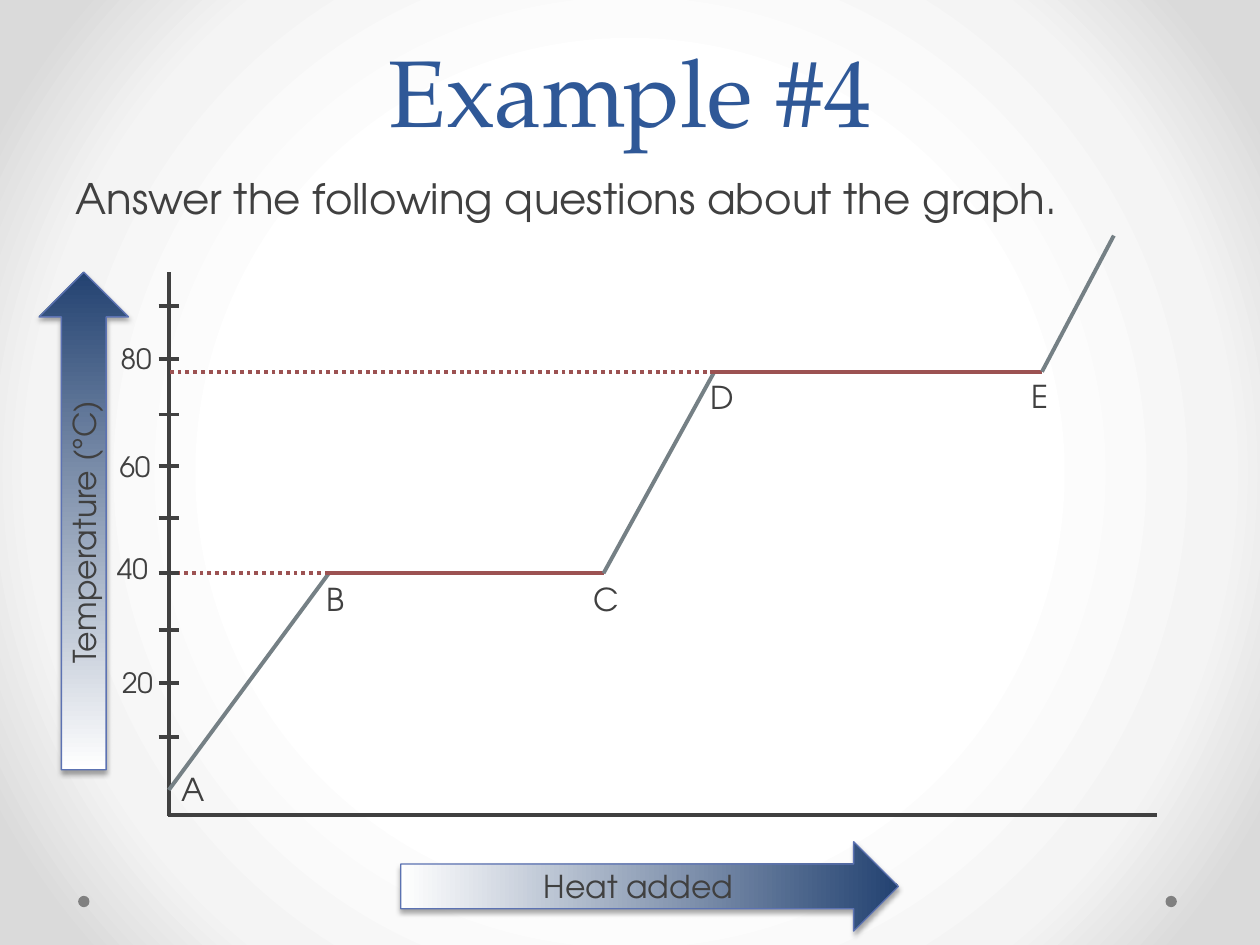
from lxml import etree
from pptx import Presentation
from pptx import util as u
from pptx.dml.color import RGBColor
from pptx.enum import dml, shapes, text
from pptx.oxml import parse_xml
from pptx.oxml.ns import nsdecls, qn

SANS, SERIF = "TeX Gyre Adventor", "TeX Gyre Pagella"
INK, HEATING, PLATEAU = "404040", "758085", "9C5252"

deck = Presentation()
deck.slide_width, deck.slide_height = u.Inches(10), u.Inches(7.5)
column, row = deck.slide_width / 100, deck.slide_height / 75
slide = deck.slides.add_slide(deck.slide_layouts[6])
hue = RGBColor.from_string


def write(words, box=None, host=None, size=18, font=SANS, color=INK,
          align=text.PP_ALIGN.LEFT, anchor=text.MSO_ANCHOR.TOP, leading=None, before=0):
    if host is None:
        left, top, wide, high = box
        host = slide.shapes.add_textbox(int(left * column), int(top * row),
                                        int(wide * column), int(high * row))
    frame = host.text_frame
    frame.word_wrap = True
    frame.vertical_anchor = anchor
    line = frame.paragraphs[0]
    line.alignment = align
    line.space_before = u.Pt(before)
    if leading:
        line.line_spacing = u.Pt(leading)
    run = line.add_run()
    run.text = words
    run.font.size, run.font.name = u.Pt(size), font
    run.font.color.rgb = hue(color)


def stroke(start, end, color=INK, dotted=False):
    segment = slide.shapes.add_connector(
        shapes.MSO_CONNECTOR.STRAIGHT, int(start[0] * column), int(start[1] * row),
        int(end[0] * column), int(end[1] * row))
    segment.line.width = u.Pt(2.25)
    segment.line.color.rgb = hue(color)
    if dotted:
        segment.line.dash_style = dml.MSO_LINE.ROUND_DOT
    etree.SubElement(segment._element.spPr, qn("a:effectLst"))


slide.background.fill.gradient()
backdrop = slide._element.cSld.find(qn("p:bg")).find(qn("p:bgPr"))
stops = "".join(f'<a:gs pos="{share}000"><a:srgbClr val="{shade}"/></a:gs>'
                for share, shade in ((50, "FFFFFF"), (76, "F4F4F4"), (92, "DADADA")))
backdrop.replace(backdrop[0], parse_xml(
    f'<a:gradFill {nsdecls("a")} rotWithShape="1"><a:gsLst>{stops}</a:gsLst><a:path path="circle">'
    '<a:fillToRect l="50000" t="50000" r="50000" b="50000"/></a:path></a:gradFill>'))

for left in (92.5, 6.2):
    corner_dot = slide.shapes.add_shape(shapes.MSO_SHAPE.OVAL, int(left * column), int(71.1 * row),
                                        int(0.9 * column), int(0.9 * row))
    corner_dot.shadow.inherit = False
    corner_dot.fill.solid()
    corner_dot.fill.fore_color.rgb = hue("808080")
    corner_dot.line.fill.background()

write("Example #4", (5, 0, 90, 12.1), size=54, font=SERIF, color="2F5897",
      align=text.PP_ALIGN.CENTER, anchor=text.MSO_ANCHOR.BOTTOM, leading=58)
write("Answer the following questions about the graph.", (5, 13.2, 90, 49.5),
      size=24, before=4.8)

axis_x, axis_y = 13.4, 64.7
stroke((axis_x, 21.6), (axis_x, 64.8))
stroke((91.8, axis_y), (13.3, axis_y))

for words, left, top, turn in (("Heat added", 31.8, 66.8, 0),
                               ("Temperature (°C)", -13.1, 37.8, 270)):
    arrow = slide.shapes.add_shape(shapes.MSO_SHAPE.RIGHT_ARROW, int(left * column), int(top * row),
                                   int(39.5 * column), int(7.1 * row))
    arrow.rotation = turn
    arrow.fill.gradient()
    arrow.fill.gradient_angle = 0
    for stop, shade in zip(arrow.fill.gradient_stops, ("FFFFFF", "234271")):
        stop.color.rgb = hue(shade)
    arrow.line.color.rgb = hue("5C72B2")
    arrow.line.width = u.Pt(0.75)
    arrow.shadow.inherit = False
    arrow._element.spPr.find(qn("a:effectLst")).append(parse_xml(
        f'<a:outerShdw {nsdecls("a")} blurRad="{u.Pt(3.1)}" dist="{u.Pt(1.8)}" dir="5400000" '
        'rotWithShape="0"><a:srgbClr val="000000"><a:alpha val="35000"/></a:srgbClr></a:outerShdw>'))
    write(words, host=arrow, align=text.PP_ALIGN.CENTER, anchor=text.MSO_ANCHOR.MIDDLE)

curve = [(axis_x, 62.7), (26.1, 45.5), (47.9, 45.5), (56.7, 29.5), (82.7, 29.5), (88.4, 18.7)]
for start, end in zip(curve, curve[1:]):
    stroke(start, end, PLATEAU if start[1] == end[1] else HEATING)
for boiling_or_melting in (curve[3], curve[1]):
    stroke(boiling_or_melting, (axis_x, boiling_or_melting[1]), PLATEAU, dotted=True)

for tick in (24.3, 28.5, 32.9, 37, 41.1, 45.5, 50, 54.2, 58.5):
    stroke((12.6, tick), (14.2, tick))
for degrees, left, top in (("80", 8.6, 26.6), ("60", 8.5, 35.2),
                           ("40", 8.3, 43.3), ("20", 8.7, 52.3)):
    write(degrees, (left, top, 6.5, 3.7), size=16)
for point, left, top in (("A", 13.4, 60.6), ("B", 24.9, 45.5), ("C", 46.1, 45.5),
                         ("D", 55.4, 29.5), ("E", 80.9, 29.4)):
    write(point, (left, top, 3.6, 4.2))

deck.save("out.pptx")
